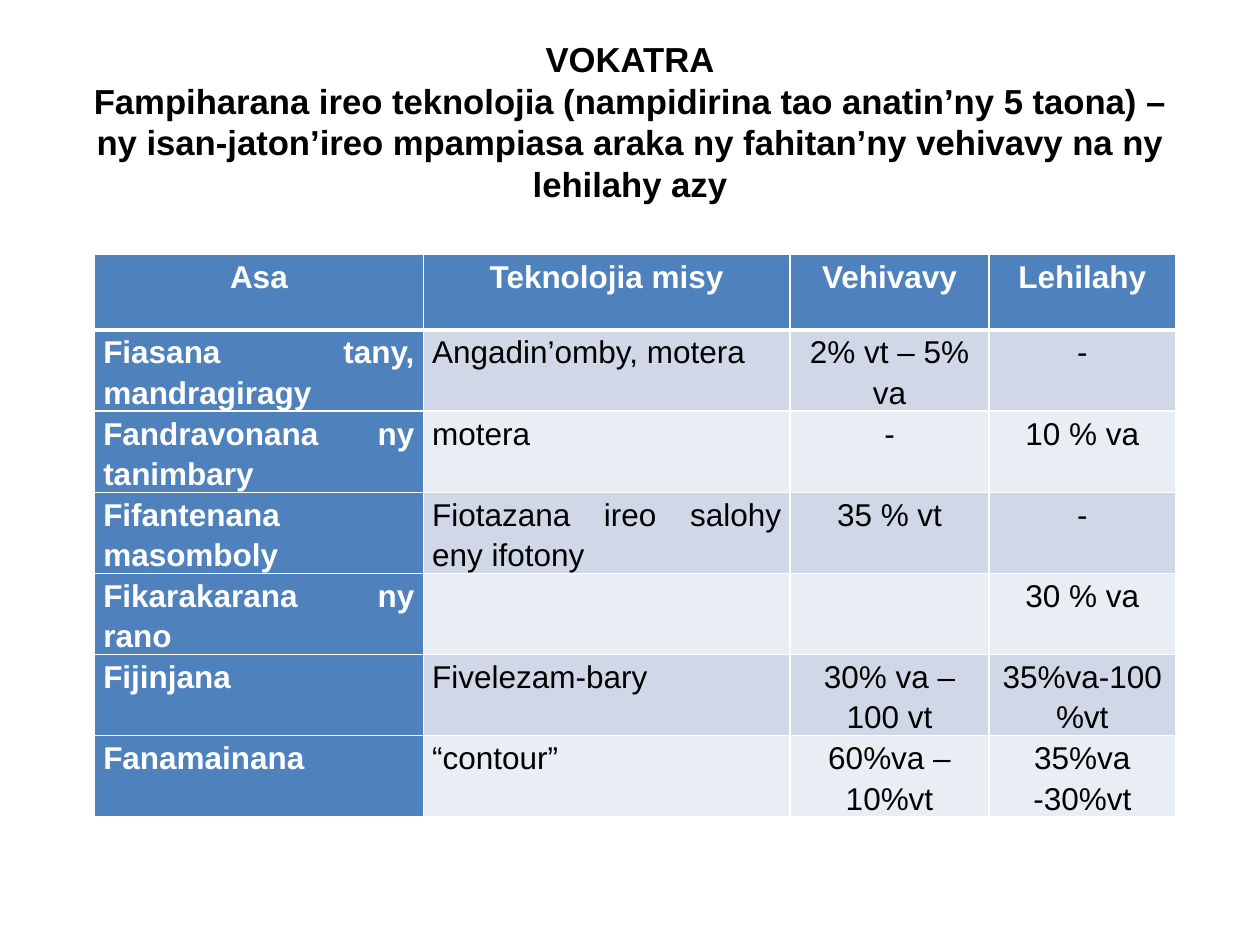
from lxml import etree
from pptx import Presentation
from pptx.dml.color import RGBColor
from pptx.enum.text import MSO_ANCHOR, MSO_AUTO_SIZE, PP_ALIGN
from pptx.oxml.ns import qn
from pptx.util import Inches, Pt

FONT = "Arial"
BLACK = RGBColor(0x00, 0x00, 0x00)
WHITE = RGBColor(0xFF, 0xFF, 0xFF)
BLUE = RGBColor(0x4F, 0x81, 0xBD)
BANDS = [RGBColor(0xD0, 0xD8, 0xE8), RGBColor(0xE9, 0xED, 0xF4)]

TITLE_LINES = [
    "VOKATRA",
    "Fampiharana ireo teknolojia (nampidirina tao anatin’ny 5 taona) – ny isan-jaton’ireo "
    "mpampiasa araka ny fahitan’ny vehivavy na ny lehilahy azy",
]
COLUMN_WIDTHS = [2.61, 2.91, 1.58, 1.48]
ROWS = [
    ["Asa", "Teknolojia misy", "Vehivavy", "Lehilahy"],
    ["Fiasana tany, mandragiragy", "Angadin’omby, motera", "2% vt – 5% va", "-"],
    ["Fandravonana ny tanimbary", "motera", "-", "10 % va"],
    ["Fifantenana masomboly", "Fiotazana ireo salohy eny ifotony", "35 % vt", "-"],
    ["Fikarakarana ny rano", "", "", "30 % va"],
    ["Fijinjana", "Fivelezam-bary", "30% va – 100 vt", "35%va-100%vt"],
    ["Fanamainana", "“contour”", "60%va – 10%vt", "35%va -30%vt"],
]


def add_span(para, text, size, color, bold):
    span = para.add_run()
    span.text = text
    span.font.name = FONT
    span.font.size = Pt(size)
    span.font.bold = bold
    span.font.color.rgb = color


def add_title(page, left, top, width, height):
    title = page.shapes.title
    title.left, title.top, title.width, title.height = left, top, width, height
    frame = title.text_frame
    frame.word_wrap = True
    frame.auto_size = MSO_AUTO_SIZE.NONE
    frame.vertical_anchor = MSO_ANCHOR.TOP
    frame.margin_top = 0
    para = frame.paragraphs[0]
    para.alignment = PP_ALIGN.CENTER
    for index, line in enumerate(TITLE_LINES):
        if index:
            para.add_line_break()
        add_span(para, line, 19.8, BLACK, True)


def set_borders(cell, widths):
    """Draw white borders; widths maps each side (L, R, T, B) to points."""
    properties = cell._tc.get_or_add_tcPr()
    for side, width in widths.items():
        line = etree.SubElement(properties, qn(f"a:ln{side}"), w=str(Pt(width)))
        fill = etree.SubElement(line, qn("a:solidFill"))
        etree.SubElement(fill, qn("a:srgbClr"), val=str(WHITE))


def fill_cell(cell, text, row, column):
    is_label = row == 0 or column == 0
    set_borders(cell, {"L": 1, "R": 1, "T": 3 if row == 1 else 1, "B": 3 if row == 0 else 1})
    cell.fill.solid()
    cell.fill.fore_color.rgb = BLUE if is_label else BANDS[(row - 1) % 2]
    cell.margin_left = cell.margin_right = Inches(0.07)
    cell.margin_top = cell.margin_bottom = 0
    if text:
        para = cell.text_frame.paragraphs[0]
        para.alignment = PP_ALIGN.CENTER if row == 0 or column > 1 else PP_ALIGN.JUSTIFY
        para.line_spacing = 1.15
        add_span(para, text, 18, WHITE if is_label else BLACK, is_label)


def add_results_table(page, left, top, width, row_height):
    table = page.shapes.add_table(
        len(ROWS), len(COLUMN_WIDTHS), left, top, width, row_height * len(ROWS)
    ).table
    for column, column_width in zip(table.columns, COLUMN_WIDTHS):
        column.width = Inches(column_width)
    for row, texts in enumerate(ROWS):
        for column, text in enumerate(texts):
            fill_cell(table.cell(row, column), text, row, column)


def main():
    deck = Presentation()
    deck.slide_width, deck.slide_height = Inches(10), Inches(7.5)
    page = deck.slides.add_slide(deck.slide_layouts.get_by_name("Title Only"))

    # Heading
    add_title(page, Inches(0.5), Inches(0.3), Inches(9), Inches(1.56))

    # Results by task
    add_results_table(page, Inches(0.75), Inches(2.02), Inches(sum(COLUMN_WIDTHS)), Inches(0.6))

    deck.save("out.pptx")


if __name__ == "__main__":
    main()
